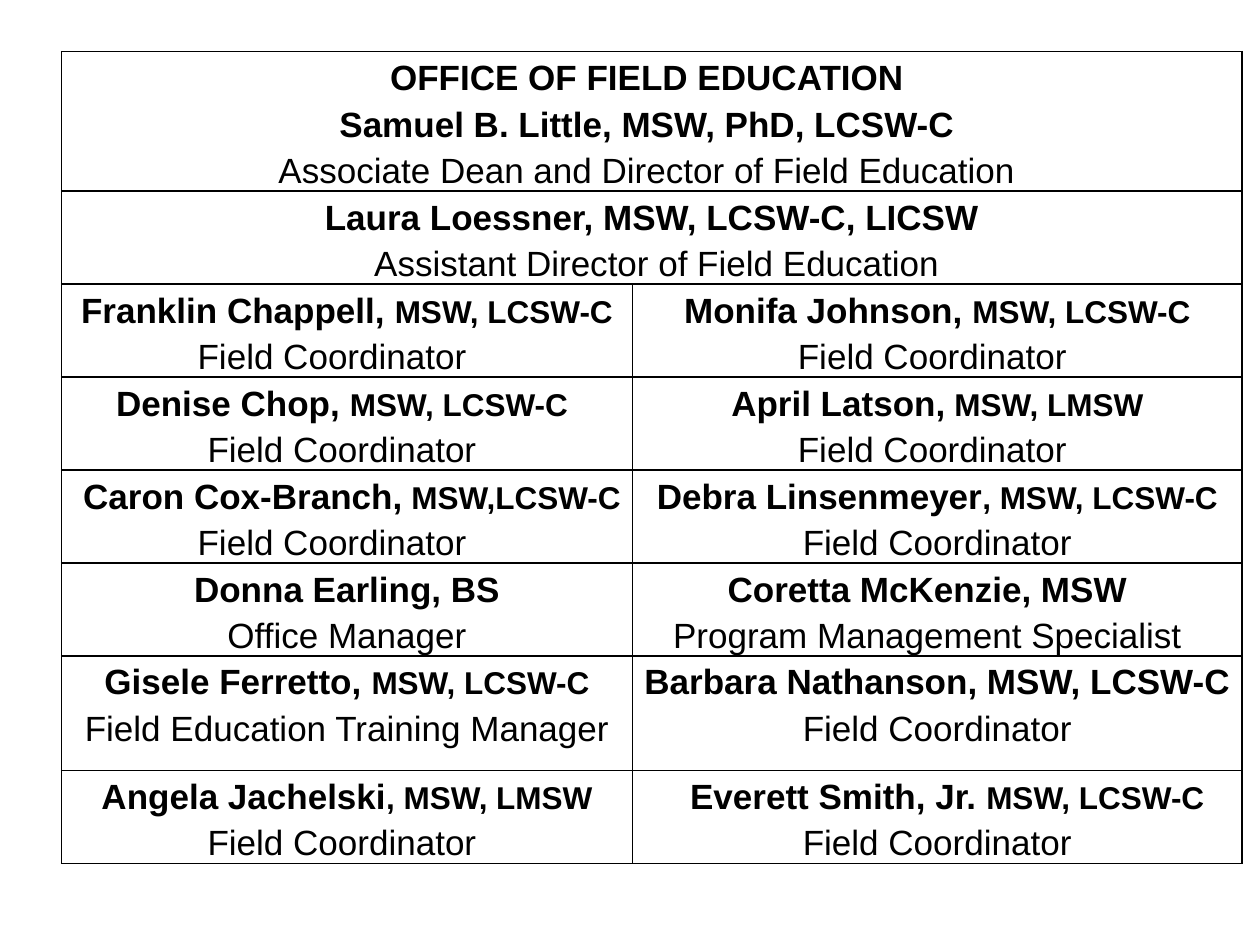
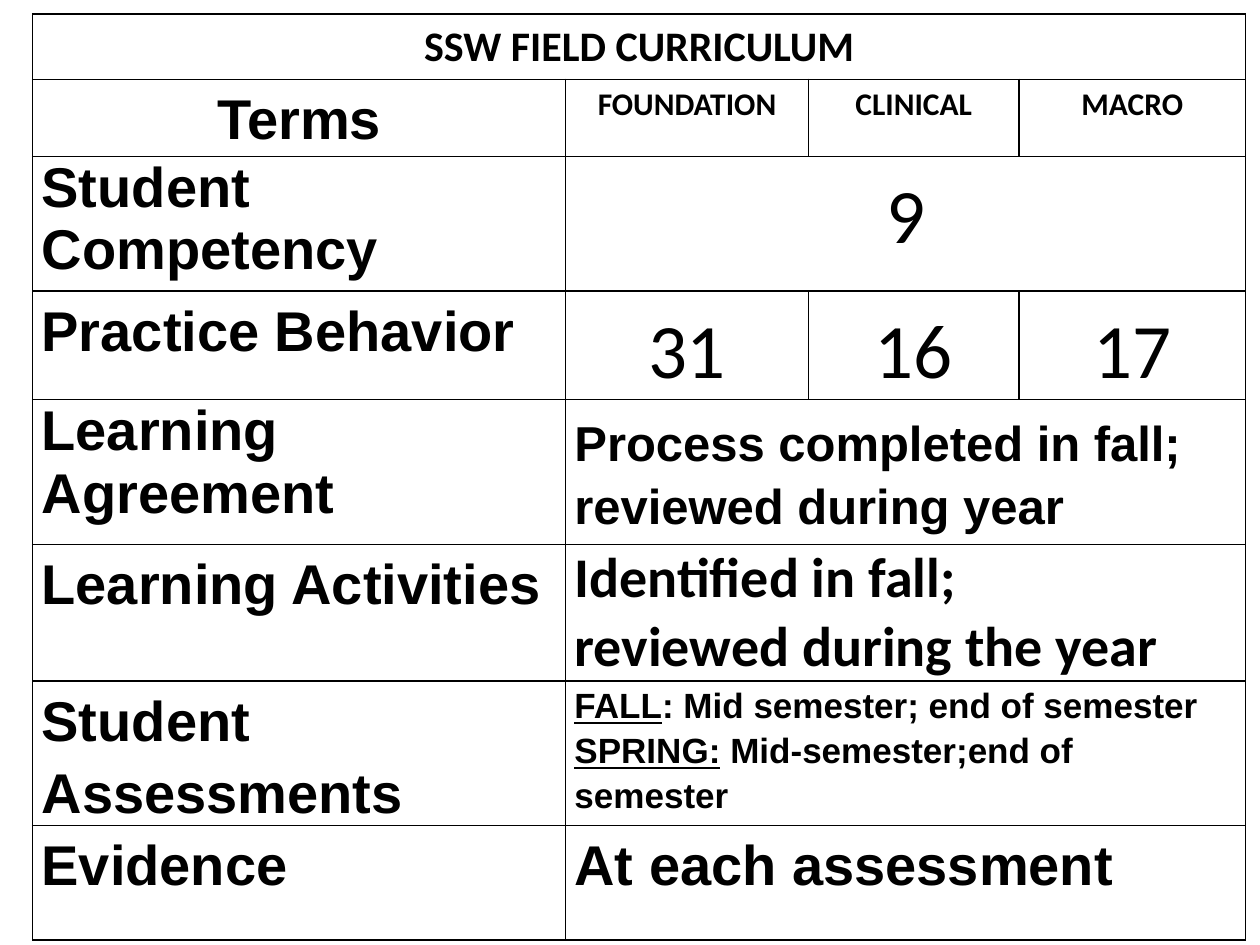
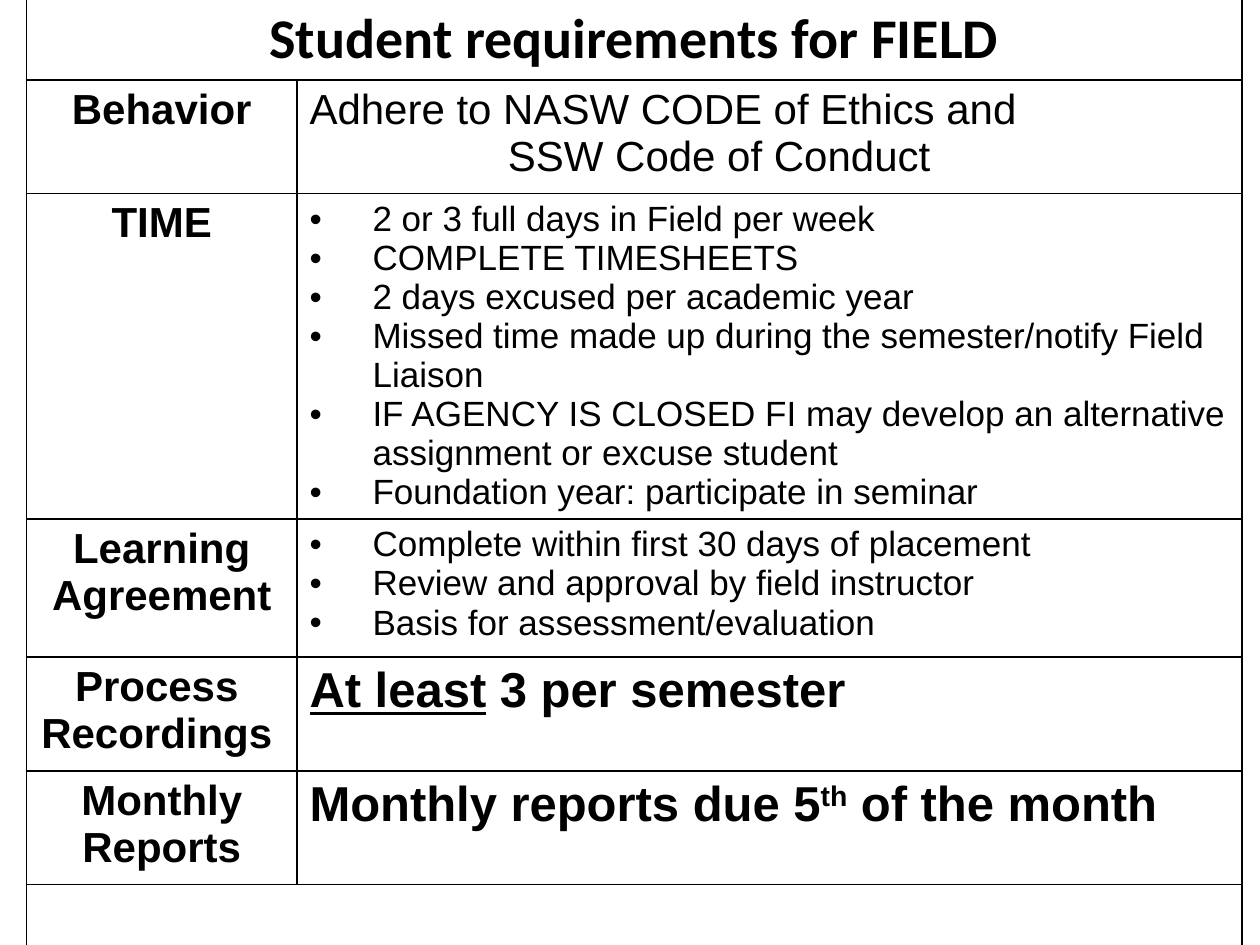
from dataclasses import dataclass

from lxml import etree
from pptx import Presentation
from pptx.dml.color import RGBColor
from pptx.enum.text import PP_ALIGN as Align
from pptx.oxml.ns import qn
from pptx.util import Cm, Pt

COLORS = {"ink": "000000", "paper": "FFFFFF"}
BORDER_WIDTH = Pt(1)
BULLET_INDENT = Cm(1.27)


@dataclass(frozen=True)
class Run:
    """Text whose set fields override the font of its line."""
    text: str
    size: float | None = None
    underline: bool | None = None
    superscript: bool = False


@dataclass(frozen=True)
class Line:
    runs: tuple[Run, ...]
    size: float
    bold: bool = True
    font: str = "Arial"
    align: Align = Align.LEFT
    spacing: float = 1.0
    bullet: bool = False
    left_indent: float = 0
    right_indent: float = 0


@dataclass(frozen=True)
class Cell:
    lines: tuple[Line, ...] = ()
    span: int = 1
    top_margin: float | None = None


@dataclass(frozen=True)
class Grid:
    """A table with its lengths in centimetres."""
    left: float
    top: float
    columns: tuple[float, ...]
    rows: tuple[float, ...]
    side_margin: float
    end_margin: float
    cells: tuple[tuple[Cell, ...], ...]


def line(*parts: str | Run, size: float, **options) -> Line:
    runs = tuple(Run(part) if isinstance(part, str) else part for part in parts)
    return Line(runs, size, **options)


def draw_borders(table_cell) -> None:
    properties = table_cell._tc.get_or_add_tcPr()
    for side in ("lnL", "lnR", "lnT", "lnB"):
        border = etree.SubElement(properties, qn(f"a:{side}"), w=str(BORDER_WIDTH))
        fill = etree.SubElement(border, qn("a:solidFill"))
        etree.SubElement(fill, qn("a:srgbClr"), val=COLORS["ink"])


def write_line(paragraph, content: Line) -> None:
    properties = paragraph._p.get_or_add_pPr()
    paragraph.alignment = content.align
    paragraph.line_spacing = content.spacing
    if content.bullet:
        properties.set("marL", str(BULLET_INDENT))
        properties.set("indent", str(-BULLET_INDENT))
        etree.SubElement(properties, qn("a:buFont"), typeface="Arial")
        etree.SubElement(properties, qn("a:buChar"), char="•")
    if content.left_indent:
        properties.set("marL", str(Cm(content.left_indent)))
    if content.right_indent:
        properties.set("marR", str(Cm(content.right_indent)))
    font = paragraph.font
    font.name, font.size, font.bold = content.font, Pt(content.size), content.bold
    font.color.rgb = RGBColor.from_string(COLORS["ink"])
    for part in content.runs:
        run = paragraph.add_run()
        run.text = part.text
        if part.size:
            run.font.size = Pt(part.size)
        if part.underline:
            run.font.underline = True
        if part.superscript:
            run._r.get_or_add_rPr().set("baseline", "30000")


def write_cell(table_cell, content: Cell, grid: Grid) -> None:
    table_cell.margin_left = table_cell.margin_right = Cm(grid.side_margin)
    table_cell.margin_bottom = Cm(grid.end_margin)
    top = grid.end_margin if content.top_margin is None else content.top_margin
    table_cell.margin_top = Cm(top)
    frame = table_cell.text_frame
    for index, content_line in enumerate(content.lines):
        paragraph = frame.add_paragraph() if index else frame.paragraphs[0]
        write_line(paragraph, content_line)


def draw_grid(slide, grid: Grid) -> None:
    frame = slide.shapes.add_table(
        len(grid.rows), len(grid.columns), Cm(grid.left), Cm(grid.top),
        Cm(sum(grid.columns)), Cm(sum(grid.rows)))
    table = frame.table
    table.first_row = table.horz_banding = False
    for column, width in zip(table.columns, grid.columns):
        column.width = Cm(width)
    for row, height in zip(table.rows, grid.rows):
        row.height = Cm(height)
    for table_cell in table.iter_cells():
        draw_borders(table_cell)
        table_cell.fill.solid()
        table_cell.fill.fore_color.rgb = RGBColor.from_string(COLORS["paper"])
    for row_index, row_cells in enumerate(grid.cells):
        column_index = 0
        for content in row_cells:
            table_cell = table.cell(row_index, column_index)
            column_index += content.span
            if content.span > 1:
                table_cell.merge(table.cell(row_index, column_index - 1))
            write_cell(table_cell, content, grid)


# Office staff

def staff_line(*parts: str | Run, **options) -> Line:
    return line(*parts, size=20, align=Align.CENTER, spacing=1.19, **options)


def person(name: str, credentials: str = "", role: str = "Field Coordinator",
           name_left: float = 0, name_right: float = 0, role_right: float = 0) -> Cell:
    """A bold name with smaller credentials above a role; indents in centimetres."""
    parts = (name, Run(credentials, size=18)) if credentials else (name,)
    return Cell((staff_line(*parts, left_indent=name_left, right_indent=name_right),
                 staff_line(role, bold=False, right_indent=role_right)))


STAFF = Grid(
    left=1.24, top=1.04, columns=(11.51, 12.29),
    rows=(2.79, 1.88, 1.85, 1.85, 1.85, 1.85, 2.31, 1.85),
    side_margin=0.15, end_margin=0,
    cells=(
        (Cell((staff_line("OFFICE OF FIELD EDUCATION", right_indent=0.2),
               staff_line("Samuel B. Little, MSW, PhD, LCSW-C"),
               staff_line("Associate Dean and Director of Field Education", bold=False)),
              span=2),),
        (Cell((staff_line("Laura Loessner, MSW, LCSW-C, LICSW"),
               staff_line("Assistant Director of Field Education", bold=False,
                          left_indent=0.2)), span=2),),
        (person("Franklin Chappell, ", "MSW, LCSW-C", role_right=0.6),
         person("Monifa Johnson, ", "MSW, LCSW-C", role_right=0.2)),
        (person("Denise Chop, ", "MSW, LCSW-C", name_right=0.2),
         person("April Latson,", " MSW, LMSW", role_right=0.2)),
        (person("Caron Cox-Branch,", " MSW,LCSW-C", name_left=0.2, role_right=0.6),
         person("Debra Linsenmeyer", ", MSW, LCSW-C")),
        (person("Donna Earling, BS", role="Office Manager"),
         person("Coretta McKenzie, MSW", role="Program Management Specialist",
                name_right=0.4)),
        (person("Gisele Ferretto, ", "MSW, LCSW-C", "Field Education Training Manager"),
         person("Barbara Nathanson, MSW, LCSW-C")),
        (person("Angela Jachelski", ", MSW, LMSW", role_right=0.2),
         person("Everett Smith, Jr. ", "MSW, LCSW-C", name_left=0.4)),
    ))


# Field curriculum

def term(text: str, spacing: float = 1.15, align: Align = Align.LEFT) -> Cell:
    return Cell((line(text, size=32, spacing=spacing, align=align),))


def centered(text: str, size: float, bold: bool = True, span: int = 1) -> Cell:
    return Cell((line(text, size=size, bold=bold, font="Calibri", spacing=1.15,
                      align=Align.CENTER),), span)


def count(text: str, span: int = 1) -> Cell:
    return centered(text, 44, bold=False, span=span)


CURRICULUM = Grid(
    left=0.66, top=0.28, columns=(10.74, 4.9, 4.24, 4.57),
    rows=(1.32, 1.55, 2.72, 2.13, 2.92, 2.72, 2.29, 2.31),
    side_margin=0.18, end_margin=0,
    cells=(
        (centered("SSW FIELD CURRICULUM", 24, span=4),),
        (term("Terms", align=Align.CENTER),
         *(centered(track, 18) for track in ("FOUNDATION", "CLINICAL", "MACRO"))),
        (term("Student Competency", spacing=1.0), count("9", span=3)),
        (term("Practice Behavior"), *(count(number) for number in ("31", "16", "17"))),
        (term("Learning Agreement", spacing=1.0),
         Cell((line("Process completed in fall; reviewed during year", size=28,
                    spacing=1.15),), span=3, top_margin=0.19)),
        (term("Learning Activities"),
         Cell(tuple(line(text, size=32, font="Calibri") for text in
                    ("Identified in fall;", "reviewed during the year")), span=3)),
        (term("Student Assessments"),
         Cell((line(Run("FALL", underline=True), ": Mid semester; end of semester",
                    size=20, spacing=1.15),
               line(Run("SPRING:", underline=True), " Mid-semester;end of semester",
                    size=20, spacing=1.15)), span=3)),
        (term("Evidence"),
         Cell((line("At each assessment", size=32, spacing=1.15),), span=3)),
    ))


# Student requirements

def topic(text: str, right_indent: float = 0) -> Cell:
    return Cell((line(text, size=24, align=Align.CENTER, right_indent=right_indent),))


def bullets(*texts: str) -> Cell:
    return Cell(tuple(line(text, size=20, bold=False, bullet=True) for text in texts))


REQUIREMENTS = Grid(
    left=0.53, top=-0.03, columns=(5.46, 19.05),
    rows=(1.63, 2.29, 6.17, 2.79, 2.29, 2.29, 2.44),
    side_margin=0.25, end_margin=0.13,
    cells=(
        (Cell((line("Student requirements for FIELD", size=32, font="Calibri",
                    align=Align.CENTER),), span=2),),
        (topic("Behavior"),
         Cell((line("Adhere to NASW CODE of Ethics and", size=24, bold=False),
               line("SSW Code of Conduct", size=24, bold=False, left_indent=4)))),
        (topic("TIME"),
         bullets("2 or 3 full days in Field per week",
                 "COMPLETE TIMESHEETS",
                 "2 days excused per academic year",
                 "Missed time made up during the semester/notify Field Liaison",
                 "IF AGENCY IS CLOSED FI may develop an alternative assignment "
                 "or excuse student",
                 "Foundation year: participate in seminar")),
        (topic("Learning Agreement"),
         bullets("Complete within first 30 days of placement",
                 "Review and approval by field instructor",
                 "Basis for assessment/evaluation")),
        (topic("Process Recordings", right_indent=0.2),
         Cell((line(Run("At least", underline=True), " 3 per semester", size=28),))),
        (topic("Monthly Reports"),
         Cell((line("Monthly reports due 5", Run("th", superscript=True),
                    " of the month", size=28),))),
        (Cell(span=2),),
    ))


def main() -> None:
    presentation = Presentation()
    presentation.slide_width, presentation.slide_height = Cm(25.4), Cm(19.05)
    blank_layout = presentation.slide_layouts.get_by_name("Blank")
    for grid in (STAFF, CURRICULUM, REQUIREMENTS):
        draw_grid(presentation.slides.add_slide(blank_layout), grid)
    presentation.save("out.pptx")


if __name__ == "__main__":
    main()
